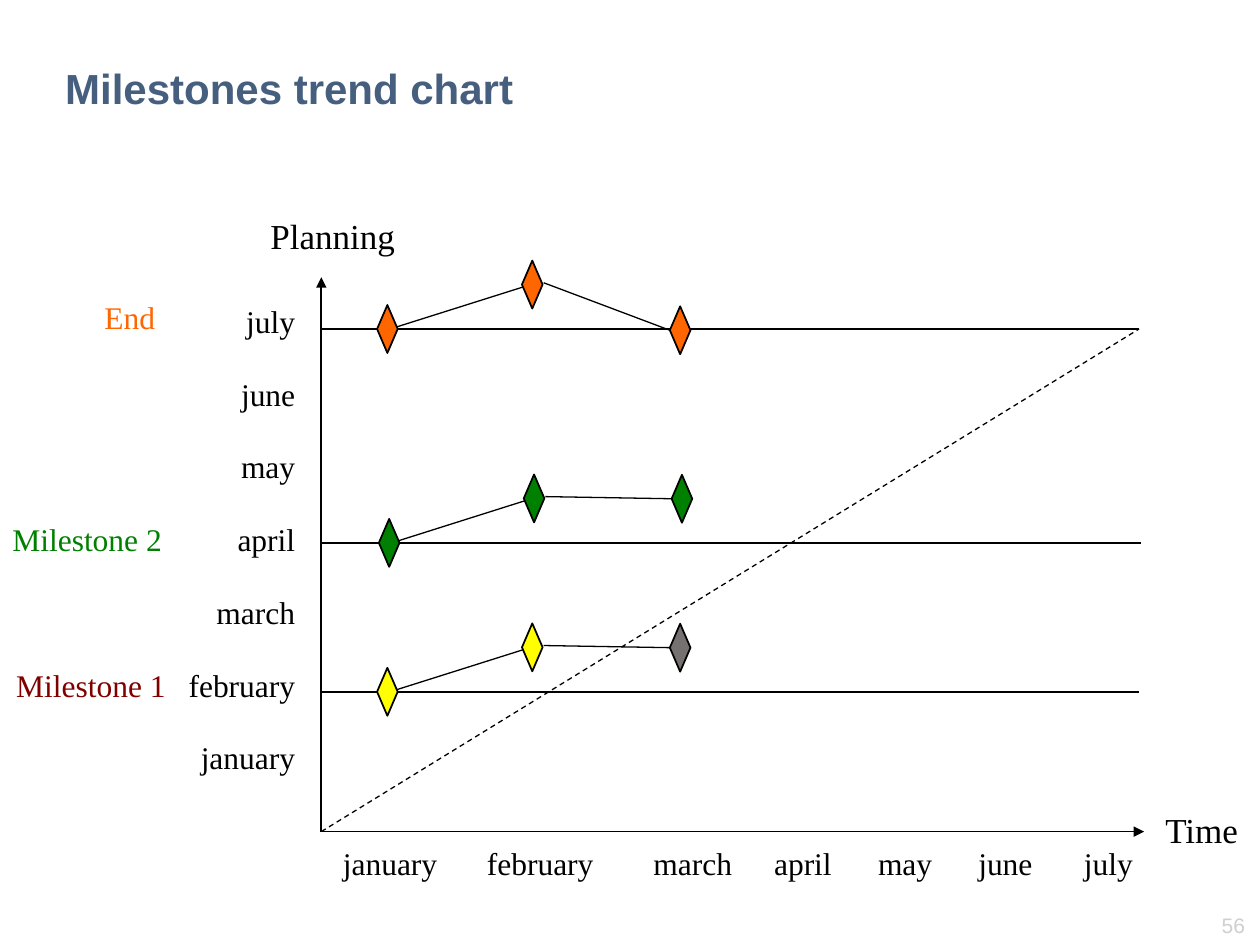
from dataclasses import dataclass

from lxml import etree
from pptx import Presentation
from pptx.dml.color import RGBColor
from pptx.enum import dml, shapes, text
from pptx.oxml import ns
from pptx.util import Pt


@dataclass(frozen=True)
class Theme:
    serif: str = "Times New Roman"
    sans: str = "Arial"
    black: str = "000000"
    heading: str = "465F7F"
    page: str = "D0CECE"
    orange: str = "FF6600"
    green: str = "008000"
    yellow: str = "FFFF00"
    maroon: str = "800000"
    grey: str = "767171"
    title_size: float = 24
    axis_size: float = 20
    label_size: float = 18
    page_size: float = 12
    axis_line: float = 1
    trend_line: float = 0.75


@dataclass(frozen=True)
class Label:
    wording: str
    left: float
    top: float
    width: float
    height: float = 28.8
    size: float = Theme.label_size
    color: str = Theme.black
    align: text.PP_ALIGN = text.PP_ALIGN.LEFT
    font: str = Theme.serif
    bold: bool = False


@dataclass(frozen=True)
class Milestone:
    baseline: float
    shift: float                        # sideways offset of the whole row
    rises: tuple[float, float, float]   # delay shown in each reported month
    fills: tuple[str, str, str]


T = Theme()
RIGHT, CENTER = text.PP_ALIGN.RIGHT, text.PP_ALIGN.CENTER
ORIGIN_X, ORIGIN_Y = 183.6, 475.2
AXIS_TOP, AXIS_RIGHT, GRID_RIGHT = 158.4, 653.8, 650.9
DIAMOND_W, DIAMOND_H = 11.8, 27.4
REPORT_X = (221.4, 304.2, 388.7)

MONTHS = ("january", "february", "march", "april", "may", "june", "july")
MONTH_WIDTHS = (88, 98, 88, 66, 66, 66, 66)
MONTH_RIGHTS = (257, 346.3, 425.5, 482.4, 539.8, 597.1, 654.5)
ROWS_RIGHT, JANUARY_TOP, ROW_STEP = 175.8, 418.3, 41.55
COLUMNS_TOP = 478.8

MILESTONES = (
    Milestone(188, 0, (0, 25.4, -0.7), (T.orange,) * 3),
    Milestone(310.2, 1, (0, 25.4, 25.2), (T.green,) * 3),
    Milestone(395.3, 0, (0, 25.4, 25.2), (T.yellow, T.yellow, T.grey)),
)

LABELS = (
    Label("Milestones trend chart", 30.2, 23, 559.4, 54, T.title_size,
          T.heading, font=T.sans, bold=True),
    Label("56", 659.5, 517.7, 59, 21.6, T.page_size, T.page, RIGHT, T.sans),
    Label("Planning", 110.2, 118.8, 159.8, 31.7, T.axis_size, align=CENTER),
    Label("Time", 658.8, 457.9, 68.4, 31.7, T.axis_size),
    Label("End", 52.6, 167, 60.5, color=T.orange),
    Label("Milestone 2", 0, 293.8, 117.4, color=T.green),
    Label("Milestone 1", 2.2, 376.9, 117.4, color=T.maroon),
)


def add_label(slide, label: Label) -> None:
    box = slide.shapes.add_textbox(
        Pt(label.left), Pt(label.top), Pt(label.width), Pt(label.height))
    frame = box.text_frame
    frame.word_wrap = True
    frame.vertical_anchor = text.MSO_ANCHOR.MIDDLE
    paragraph = frame.paragraphs[0]
    paragraph.alignment = label.align
    run = paragraph.add_run()
    run.text = label.wording
    run.font.name = label.font
    run.font.size = Pt(label.size)
    run.font.bold = label.bold
    run.font.color.rgb = RGBColor.from_string(label.color)


def add_line(slide, x1: float, y1: float, x2: float, y2: float,
             width: float = T.axis_line, arrow: bool = False,
             dashed: bool = False) -> None:
    line = slide.shapes.add_connector(
        shapes.MSO_CONNECTOR.STRAIGHT, Pt(x1), Pt(y1), Pt(x2), Pt(y2))
    line.line.width = Pt(width)
    line.line.color.rgb = RGBColor.from_string(T.black)
    if dashed:
        line.line.dash_style = dml.MSO_LINE.DASH
    if arrow:
        etree.SubElement(line.line._get_or_add_ln(), ns.qn("a:tailEnd"),
                         type="triangle")
    etree.SubElement(line._element.spPr, ns.qn("a:effectLst"))


def add_diamond(slide, x: float, y: float, color: str) -> None:
    diamond = slide.shapes.add_shape(
        shapes.MSO_SHAPE.DIAMOND, Pt(x - DIAMOND_W / 2), Pt(y - DIAMOND_H / 2),
        Pt(DIAMOND_W), Pt(DIAMOND_H))
    diamond.shadow.inherit = False
    diamond.fill.solid()
    diamond.fill.fore_color.rgb = RGBColor.from_string(color)
    diamond.line.color.rgb = RGBColor.from_string(T.black)
    diamond.line.width = Pt(T.axis_line)


def add_milestone(slide, milestone: Milestone) -> None:
    base, shift = milestone.baseline, milestone.shift
    add_line(slide, ORIGIN_X, base, GRID_RIGHT + shift, base)
    january, february, march = [
        (x + shift, base - rise) for x, rise in zip(REPORT_X, milestone.rises)]
    # The first link lies beneath the january diamond
    add_diamond(slide, *february, milestone.fills[1])
    add_diamond(slide, *march, milestone.fills[2])
    add_line(slide, january[0], january[1] + 0.5,
             february[0] - 5, february[1] + 1.3, T.trend_line)
    add_line(slide, february[0] + 6.5, february[1] - 1,
             march[0] - 6, march[1], T.trend_line)
    add_diamond(slide, *january, milestone.fills[0])


def main() -> None:
    deck = Presentation()
    deck.slide_width, deck.slide_height = Pt(720), Pt(540)
    slide = deck.slides.add_slide(deck.slide_layouts[6])

    # Title, page number, axis names and milestone names
    for label in LABELS:
        add_label(slide, label)

    # Axes
    add_line(slide, ORIGIN_X, ORIGIN_Y, ORIGIN_X, AXIS_TOP, arrow=True)
    add_line(slide, ORIGIN_X, ORIGIN_Y, AXIS_RIGHT, ORIGIN_Y, arrow=True)

    # Months on both axes
    for i, (month, width, right) in enumerate(
            zip(MONTHS, MONTH_WIDTHS, MONTH_RIGHTS)):
        add_label(slide, Label(month, ROWS_RIGHT - width,
                               JANUARY_TOP - i * ROW_STEP, width, align=RIGHT))
        add_label(slide, Label(month, right - width, COLUMNS_TOP, width,
                               align=RIGHT))

    # Milestone trends and the diagonal of completion
    for milestone in MILESTONES:
        add_milestone(slide, milestone)
    add_line(slide, ORIGIN_X, ORIGIN_Y, GRID_RIGHT, MILESTONES[0].baseline,
             T.trend_line, dashed=True)

    deck.save("out.pptx")


if __name__ == "__main__":
    main()
